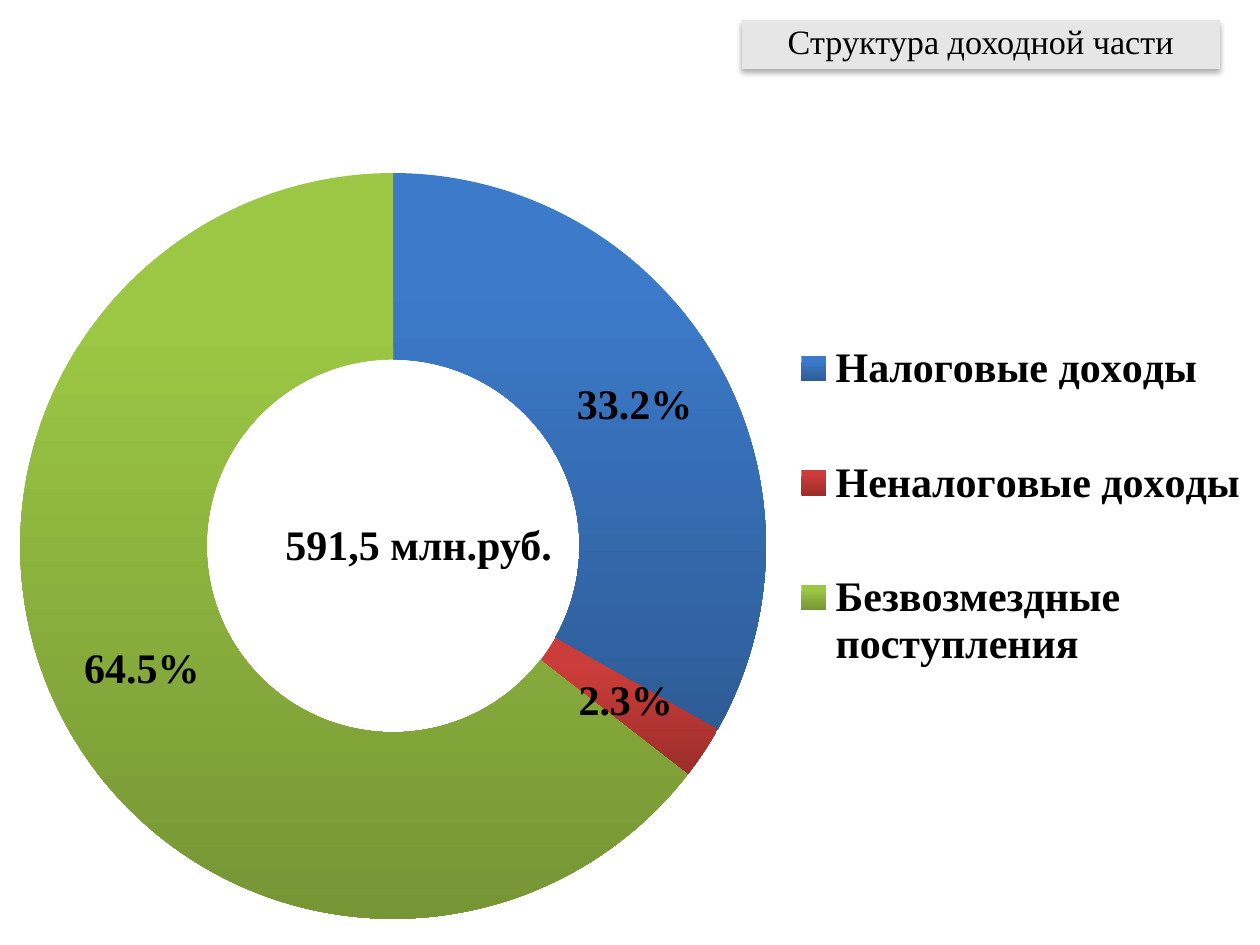
from lxml import etree
from pptx import Presentation
from pptx import util as u
from pptx.chart import data as chart_data
from pptx.dml import color
from pptx.enum import chart as chart_enum
from pptx.enum import shapes, text
from pptx.oxml import parse_xml
from pptx.oxml.ns import nsdecls, qn

PX = 914400 // 126
FONT = "Times New Roman"
COLORS = {"black": "000000", "title": "E6E6E6"}
# category: (share, top colour, bottom colour)
INCOME = {
    "Налоговые доходы": (33.2, "3C7ACA", "2E5C97"),
    "Неналоговые доходы": (2.3, "CB3D3A", "9B2D2A"),
    "Безвозмездные поступления": (64.5, "9BC744", "769535"),
}


def style_font(font, size, bold):
    font.name = FONT
    font.size = u.Pt(size)
    font.bold = bold
    font.color.rgb = color.RGBColor.from_string(COLORS["black"])


def make_layout(left, top, width, height, inner=False):
    layout = parse_xml(f"<c:layout {nsdecls('c')}><c:manualLayout/></c:layout>")
    settings = {"layoutTarget": "inner"} if inner else {}
    settings.update(xMode="edge", yMode="edge", x=left, y=top, w=width, h=height)
    for name, value in settings.items():
        etree.SubElement(layout[0], qn(f"c:{name}")).set("val", str(value))
    return layout


presentation = Presentation()
presentation.slide_width = 1260 * PX
presentation.slide_height = 945 * PX
slide = presentation.slides.add_slide(presentation.slide_layouts[6])

# Title plate with a soft shadow
plate = slide.shapes.add_shape(
    shapes.MSO_SHAPE.RECTANGLE, 742 * PX, 20 * PX, 478 * PX, 49 * PX)
plate.fill.solid()
plate.fill.fore_color.rgb = color.RGBColor.from_string(COLORS["title"])
plate.line.fill.background()
plate.shadow.inherit = False
effects = plate.element.spPr.find(qn("a:effectLst"))
effects.append(parse_xml(
    f'<a:outerShdw {nsdecls("a")} blurRad="44450" dist="27940" dir="5400000" '
    'rotWithShape="0"><a:srgbClr val="000000"><a:alpha val="32000"/>'
    '</a:srgbClr></a:outerShdw>'))
frame = plate.text_frame
frame.word_wrap = True
frame.vertical_anchor = text.MSO_ANCHOR.MIDDLE
paragraph = frame.paragraphs[0]
paragraph.alignment = text.PP_ALIGN.CENTER
paragraph.line_spacing = 0.8
run = paragraph.add_run()
run.text = "Структура доходной части"
style_font(run.font, 19.5, False)

# Doughnut of income shares
income_data = chart_data.CategoryChartData()
income_data.categories = list(INCOME)
income_data.add_series("Series 1", [share for share, _, _ in INCOME.values()])
chart = slide.shapes.add_chart(
    chart_enum.XL_CHART_TYPE.DOUGHNUT, 0, 151 * PX, 1260 * PX, 790 * PX,
    income_data).chart
style_font(chart.font, 24, True)
chart.has_title = False
plot = chart.plots[0]
plot.vary_by_categories = True

# Vertical gradient on each ring segment
for index, (_, *shades) in enumerate(INCOME.values()):
    point = plot.series[0].points[index]
    fill = point.format.fill
    fill.gradient()
    fill.gradient_angle = 270
    for stop, shade, position in zip(fill.gradient_stops, shades, (0.2, 1)):
        stop.color.rgb = color.RGBColor.from_string(shade)
        stop.position = position
    point.format.line.fill.background()

# Percent labels
plot.has_data_labels = True
labels = plot.data_labels
labels.show_percentage = True
labels.show_value = False
labels.number_format = "0.0%"
labels.number_format_is_linked = False
style_font(labels.font, 24, True)

# Legend and plot placement
chart.has_legend = True
legend = chart.legend
legend.position = chart_enum.XL_LEGEND_POSITION.RIGHT
legend.include_in_layout = False
style_font(legend.font, 24, True)
legend_element = chart.element.find(".//" + qn("c:legend"))
plot_area = chart.element.find(".//" + qn("c:plotArea"))
for parent, layout, place in (
        (legend_element, make_layout(0.62, 0.16, 0.38, 0.58), 1),
        (plot_area, make_layout(0.016, 0.028, 0.592, 0.944, True), 0)):
    for former in parent.findall(qn("c:layout")):
        parent.remove(former)
    parent.insert(place, layout)

# Total in the middle of the ring
total = slide.shapes.add_textbox(273 * PX, 512 * PX, 377 * PX, 63 * PX)
total.text_frame.word_wrap = True
total.text_frame.auto_size = text.MSO_AUTO_SIZE.SHAPE_TO_FIT_TEXT
run = total.text_frame.paragraphs[0].add_run()
run.text = "591,5 млн.руб."
style_font(run.font, 24, True)

presentation.save("out.pptx")
